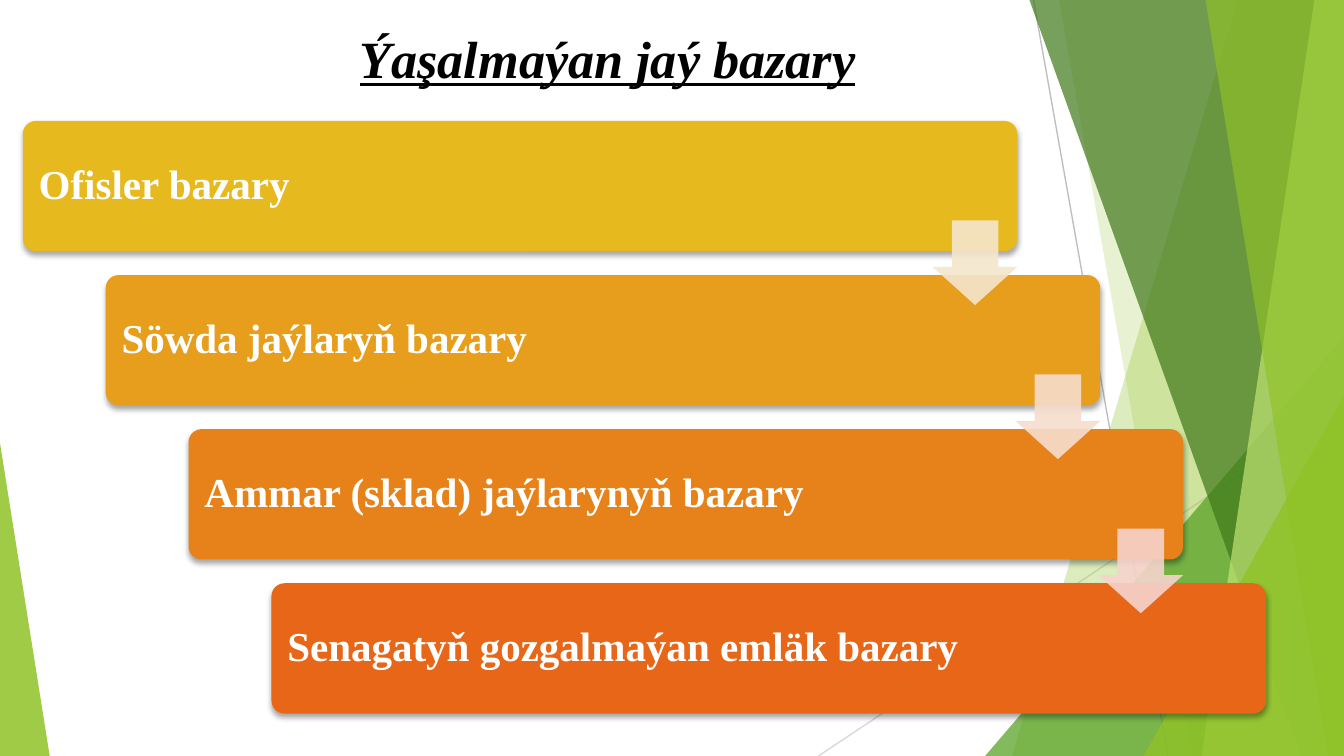
from lxml import etree
from pptx import Presentation
from pptx.dml.color import RGBColor
from pptx.enum import shapes, text
from pptx.oxml import ns
from pptx.util import Inches, Pt

FONT = "Times New Roman"
BLACK = RGBColor(0x00, 0x00, 0x00)
WHITE = RGBColor(0xFF, 0xFF, 0xFF)
GRAY = RGBColor(0xBF, 0xBF, 0xBF)
LIGHT_GRAY = RGBColor(0xD9, 0xD9, 0xD9)
LIME = RGBColor(0x90, 0xC2, 0x26)
PALE_LIME = RGBColor(0xC0, 0xE4, 0x74)
GREEN = RGBColor(0x54, 0xA0, 0x21)
DARK_GREEN = RGBColor(0x3F, 0x78, 0x19)

PAGE_WIDTH = 10
PAGE_HEIGHT = PAGE_WIDTH * 9 / 16

MARKETS = [
    ("Ofisler bazary", RGBColor(0xE6, 0xB9, 0x1E)),
    ("Söwda jaýlaryň bazary", RGBColor(0xE6, 0x9E, 0x1C)),
    ("Ammar (sklad) jaýlarynyň bazary", RGBColor(0xE7, 0x82, 0x1A)),
    ("Senagatyň gozgalmaýan emläk bazary", RGBColor(0xE7, 0x66, 0x18)),
]
ARROW_COLORS = [
    RGBColor(0xF5, 0xE6, 0xCD),
    RGBColor(0xF6, 0xDD, 0xCD),
    RGBColor(0xF6, 0xD3, 0xCC),
]


def add_child(parent, tag, **attributes):
    return etree.SubElement(parent, ns.qn(tag), attributes)


def paint(shape, color, opacity=100):
    shape.shadow.inherit = False
    shape.fill.solid()
    shape.fill.fore_color.rgb = color
    shape.line.fill.background()
    if opacity < 100:
        color_node = shape.element.spPr.find(ns.qn("a:solidFill"))[0]
        add_child(color_node, "a:alpha", val=str(opacity * 1000))


def cast_shadow(shape):
    effects = shape.element.spPr.find(ns.qn("a:effectLst"))
    shadow = add_child(effects, "a:outerShdw", blurRad=str(Pt(3)), dist=str(Pt(2)),
                       dir="5400000", rotWithShape="0")
    color_node = add_child(shadow, "a:srgbClr", val="000000")
    add_child(color_node, "a:alpha", val="35000")


def add_shape(page, kind, box, color, opacity=100, adjustments=()):
    shape = page.shapes.add_shape(kind, *(Inches(length) for length in box))
    for index, value in enumerate(adjustments):
        shape.adjustments[index] = value
    paint(shape, color, opacity)
    return shape


def add_span(para, wording, size, color):
    span = para.add_run()
    span.text = wording
    span.font.name = FONT
    span.font.size = Pt(size)
    span.font.bold = True
    span.font.color.rgb = color
    return span


def add_backdrop(page, box):
    left, top, width, height = box
    right, bottom = left + width, top + height

    def add_line(start_x, start_y, end_x, end_y, color):
        line = page.shapes.add_connector(
            shapes.MSO_CONNECTOR.STRAIGHT,
            Inches(start_x), Inches(start_y), Inches(end_x), Inches(end_y))
        line.line.color.rgb = color
        line.line.width = Pt(0.75)
        add_child(line._element.spPr, "a:effectLst")

    def add_facet(top_inset, bottom_inset, color, opacity):
        builder = page.shapes.build_freeform(
            Inches(right - top_inset), Inches(top), scale=1.0)
        corners = [(right, top), (right, bottom), (right - bottom_inset, bottom)]
        builder.add_line_segments([(Inches(x), Inches(y)) for x, y in corners], close=True)
        paint(builder.convert_to_shape(), color, opacity)

    def add_corner(x, corner_width, corner_height, apex, color, opacity):
        add_shape(page, shapes.MSO_SHAPE.ISOSCELES_TRIANGLE,
                  (x, bottom - corner_height, corner_width, corner_height),
                  color, opacity, [apex])

    add_line(right - 2.31, top, right - 1.31, bottom, GRAY)
    add_line(right, top + 3.02, right - 3.91, bottom, LIGHT_GRAY)
    add_facet(0.79, 2.47, LIME, 30)
    add_facet(2.12, 1.13, LIME, 20)
    add_corner(right - 2.67, 2.67, 3.12, 1, GREEN, 72)
    add_facet(2.34, 0.32, DARK_GREEN, 70)
    add_facet(0.22, 1.06, PALE_LIME, 70)
    add_facet(1.03, 0.12, LIME, 65)
    add_corner(right - 1.49, 1.49, 2.68, 1, LIME, 80)
    add_corner(left, 0.37, 2.33, 0, LIME, 85)


def add_title(page, box):
    title = page.shapes.add_textbox(*(Inches(length) for length in box))
    frame = title.text_frame
    frame.word_wrap = True
    frame.margin_left = Inches(0.31)
    para = frame.paragraphs[0]
    para.alignment = text.PP_ALIGN.CENTER
    span = add_span(para, "Ýaşalmaýan jaý bazary", 28, BLACK)
    span.font.italic = True
    span.font.underline = True


def add_staircase(page, box):
    left, top, width, height = box
    step_width, step_height, arrow_size = 7.4, 0.97, 0.63
    shift_x = (width - step_width) / (len(MARKETS) - 1)
    shift_y = (height - step_height) / (len(MARKETS) - 1)

    for index, (wording, color) in enumerate(MARKETS):
        step = add_shape(
            page, shapes.MSO_SHAPE.ROUNDED_RECTANGLE,
            (left + index * shift_x, top + index * shift_y, step_width, step_height),
            color, adjustments=[0.1])
        cast_shadow(step)
        frame = step.text_frame
        frame.word_wrap = True
        frame.vertical_anchor = text.MSO_ANCHOR.MIDDLE
        frame.margin_left = Inches(0.09)
        para = frame.paragraphs[0]
        para.alignment = text.PP_ALIGN.LEFT
        para.line_spacing = 0.9
        add_span(para, wording, 22, WHITE)

    for index, color in enumerate(ARROW_COLORS):
        add_shape(
            page, shapes.MSO_SHAPE.DOWN_ARROW,
            (left + index * shift_x + step_width - arrow_size,
             top + index * shift_y + 0.74, arrow_size, arrow_size),
            color, 90, [0.55, 0.45])


def main():
    deck = Presentation()
    deck.slide_width, deck.slide_height = Inches(PAGE_WIDTH), Inches(PAGE_HEIGHT)
    page = deck.slides.add_slide(deck.slide_layouts[6])
    add_backdrop(page, (0, 0, PAGE_WIDTH, PAGE_HEIGHT))
    add_title(page, (0.83, 0.15, 7.17, 0.57))
    add_staircase(page, (0.17, 0.9, 9.25, 4.41))
    deck.save("out.pptx")


if __name__ == "__main__":
    main()
